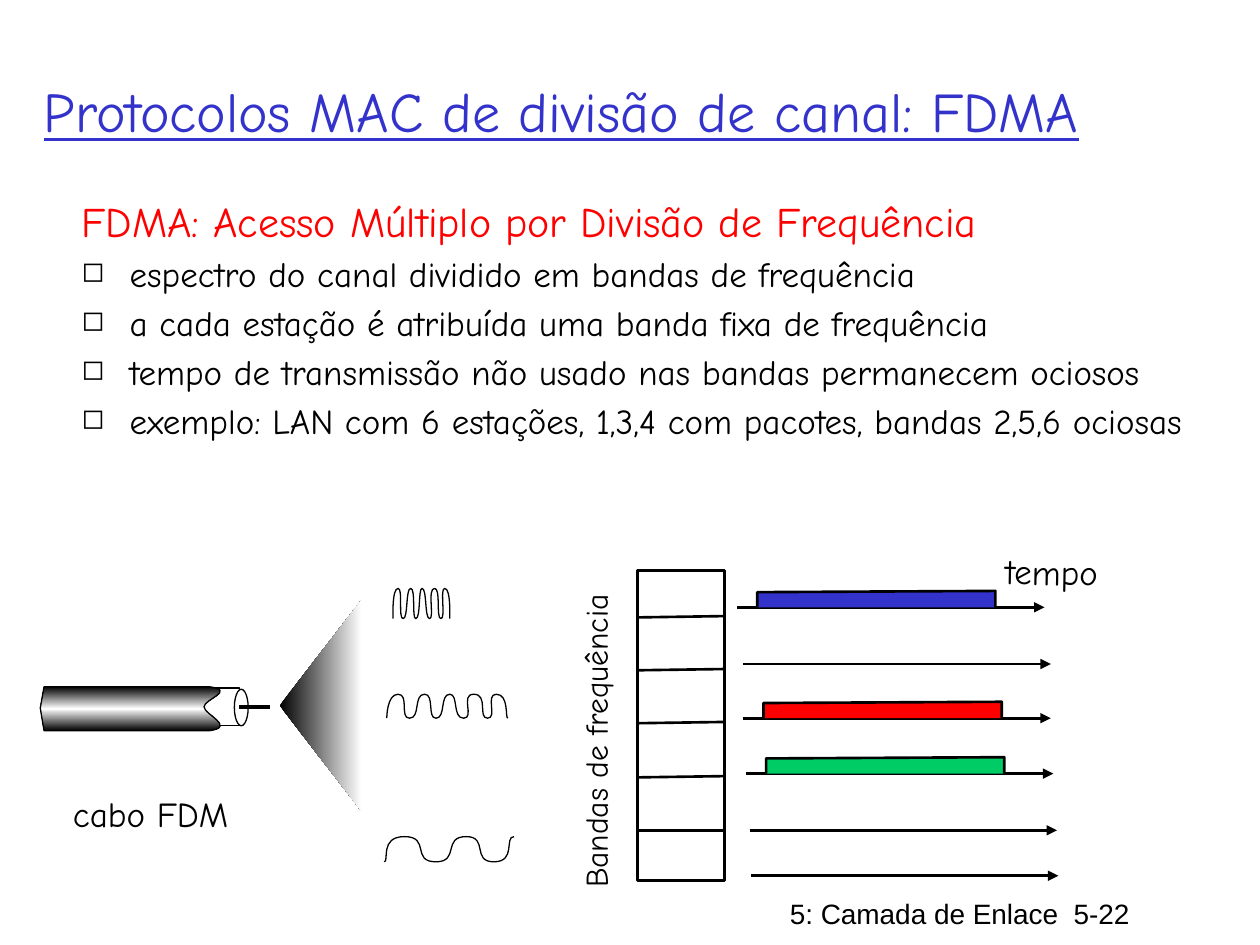
from dataclasses import dataclass
from typing import Optional

from lxml.etree import Element, SubElement
from pptx import Presentation
from pptx.dml.color import RGBColor
from pptx.enum.shapes import MSO_CONNECTOR, MSO_SHAPE
from pptx.enum.text import MSO_ANCHOR
from pptx.oxml.ns import qn
from pptx.util import Inches, Pt

BLACK = RGBColor(0, 0, 0)
WHITE = RGBColor(255, 255, 255)
BLUE = RGBColor(0x33, 0x33, 0xCC)
RED = RGBColor(255, 0, 0)
GREEN = RGBColor(0, 0xCC, 0x66)
COMIC = "Comic Neue"

Point = tuple[float, float]


@dataclass
class Label:
    text: str
    box: tuple[float, float, float, float]
    size: int
    font: str = COMIC
    color: RGBColor = BLACK
    turn: float = 0
    wrap: bool = False
    line: bool = False
    mid: bool = False


@dataclass
class Band:
    left: float
    base: float
    fill: Optional[RGBColor] = None


@dataclass
class Wave:
    top: float
    low: float
    xs: tuple[float, ...]  # start, then two controls and an end per half wave


deck = Presentation()
deck.slide_width, deck.slide_height = Inches(10), Inches(7.5)
slide = deck.slides.add_slide(deck.slide_layouts[6])
shapes = slide.shapes


def add_run(para, text: str, size: int, font: str, color: RGBColor):
    run = para.add_run()
    run.text = text
    run.font.size, run.font.name = Pt(size), font
    run.font.color.rgb = color
    return run


def add_label(label: Label) -> None:
    box = shapes.add_textbox(*map(Inches, label.box))
    box.rotation = label.turn
    frame = box.text_frame
    frame.word_wrap = label.wrap
    if label.mid:
        frame.vertical_anchor = MSO_ANCHOR.MIDDLE
    run = add_run(frame.paragraphs[0], label.text, label.size, label.font, label.color)
    if label.line:
        run.font.underline = True


def style(shape, fill: Optional[RGBColor], width: float) -> None:
    shape.shadow.inherit = False
    if fill is None:
        shape.fill.background()
    else:
        shape.fill.solid()
        shape.fill.fore_color.rgb = fill
    if width:
        shape.line.color.rgb = BLACK
        shape.line.width = Pt(width)
    else:
        shape.line.fill.background()


def add_form(kind, box, width: float) -> None:
    style(shapes.add_shape(kind, *map(Inches, box)), WHITE, width)


def add_path(points: list[Point], fill: Optional[RGBColor], width: float, close: bool):
    spots = [(Inches(x), Inches(y)) for x, y in points]
    pen = shapes.build_freeform(*spots[0], scale=1.0)
    pen.add_line_segments(spots[1:], close=close)
    shape = pen.convert_to_shape()
    style(shape, fill, width)
    return shape


def bend(shape, first: int = 0) -> None:
    """Turn each three segments, counted from first, into one cubic curve."""
    trace = shape._element.spPr.find(".//" + qn("a:path"))
    for i, line in enumerate(trace.findall(qn("a:lnTo"))[first:]):
        if i % 3 == 0:
            cubic = Element(qn("a:cubicBezTo"))
            line.addprevious(cubic)
        cubic.append(line[0])
        trace.remove(line)


def add_line(start: Point, end: Point, width: float, arrow: bool = False) -> None:
    line = shapes.add_connector(MSO_CONNECTOR.STRAIGHT, *map(Inches, start + end))
    line.line.color.rgb = BLACK
    line.line.width = Pt(width)
    if arrow:
        SubElement(line.line._get_or_add_ln(), qn("a:tailEnd"), type="triangle")
    SubElement(line._element.spPr, qn("a:effectLst"))


def shade(shape, angle: int, stops: list[tuple[int, RGBColor]]) -> None:
    shape.fill.gradient()
    shape.fill.gradient_angle = angle
    ramp = shape._element.spPr.find(".//" + qn("a:gsLst"))
    for stop in list(ramp):
        ramp.remove(stop)
    for place, color in stops:
        stop = SubElement(ramp, qn("a:gs"), pos=str(place * 1000))
        SubElement(stop, qn("a:srgbClr"), val=str(color))


def add_band(band: Band) -> None:
    x, y = band.left, band.base
    add_line((x, y), (x + 2.44, y), 1.5, arrow=True)
    if band.fill is not None:
        near, far = x + 0.16, x + 2.05
        edge = [(near, y), (near, y - 0.12), (far, y - 0.13), (far, y)]
        add_path(edge, band.fill, 1.5, close=False)


def add_wave(wave: Wave) -> None:
    last = wave.low
    points = [(wave.xs[0], last)]
    for half, i in enumerate(range(1, len(wave.xs), 3)):
        y = wave.low if half % 2 else wave.top
        points += zip(wave.xs[i:i + 3], (last, y, y))
        last = y
    bend(add_path(points, None, 0.75, close=False))


# Title, footer and captions
for label in (
    Label("5: Camada de Enlace  5-22", (6.17, 7.07, 3.83, 0.37), 16, "Arial", wrap=True),
    Label("Protocolos MAC de divisão de canal: FDMA", (0.25, 0.25, 9.44, 1.25), 32,
          color=BLUE, wrap=True, line=True, mid=True),
    Label("Bandas de frequência", (3.37, 5.59, 2.71, 0.4), 18, turn=270),
    Label("tempo", (7.88, 4.32, 1, 0.44), 20, turn=1.1),
    Label("cabo FDM", (0.48, 6.24, 1.51, 0.44), 20),
):
    add_label(label)

# Body list
frame = shapes.add_textbox(*map(Inches, (0.55, 1.5, 8.99, 2.17))).text_frame
frame.word_wrap = True
add_run(frame.paragraphs[0], "FDMA: Acesso Múltiplo por Divisão de Frequência", 24, COMIC, RED)
for text in (
    "espectro do canal dividido em bandas de frequência",
    "a cada estação é atribuída uma banda fixa de frequência",
    "tempo de transmissão não usado nas bandas permanecem ociosos",
    "exemplo: LAN com 6 estações, 1,3,4 com pacotes, bandas 2,5,6 ociosas",
):
    para = frame.add_paragraph()
    props = para._p.get_or_add_pPr()
    props.set("marL", str(Inches(0.38)))
    props.set("indent", str(Inches(-0.38)))
    SubElement(SubElement(props, qn("a:spcBef")), qn("a:spcPct"), val="20000")
    SubElement(props, qn("a:buSzPct"), val="80000")
    SubElement(props, qn("a:buChar"), char="◻")
    add_run(para, text, 20, COMIC, BLACK)

# Frequency column and time axes
add_form(MSO_SHAPE.RECTANGLE, (5.06, 4.53, 0.69, 2.46), 1.5)
for y in (4.9, 5.32, 5.74, 6.17):
    add_line((5.06, y), (5.74, y - 0.01), 1.5)
add_line((5.06, 6.59), (5.74, 6.59), 1.5)
for band in (
    Band(5.85, 4.82, BLUE), Band(5.9, 5.27), Band(5.9, 5.7, RED),
    Band(5.92, 6.14, GREEN), Band(5.95, 6.59), Band(5.96, 6.95),
):
    add_band(band)

# Light cone
cone = add_path([(2.87, 4.76), (2.22, 5.6), (2.87, 6.44)], WHITE, 0, close=True)
shade(cone, 0, [(0, BLACK), (100, WHITE)])

# Cable
add_form(MSO_SHAPE.RECTANGLE, (1.61, 5.46, 0.29, 0.3), 0.75)
coat = add_path([(0.35, 5.45), (0.32, 5.62), (0.35, 5.8), (1.66, 5.8),
                 (1.88, 5.77), (1.62, 5.67), (1.62, 5.61),
                 (1.62, 5.55), (1.88, 5.48), (1.66, 5.45)], WHITE, 0.75, close=True)
bend(coat, first=3)
shade(coat, 90, [(0, BLACK), (50, WHITE), (100, BLACK)])
add_form(MSO_SHAPE.OVAL, (1.86, 5.47, 0.11, 0.29), 0.75)
add_line((1.9, 5.61), (2.14, 5.61), 2.25)

# Waves
for wave in (
    Wave(5.51, 5.7, (3.07, 3.07, 3.07, 3.16, 3.25, 3.17, 3.25, 3.34, 3.28, 3.37,
                     3.45, 3.39, 3.46, 3.54, 3.49, 3.57, 3.64, 3.59, 3.68, 3.77, 3.65, 3.76,
                     3.88, 3.79, 3.87, 3.95, 3.85, 3.94, 4.04, 4.01, 4.03)),
    Wave(4.67, 4.91, (3.12, 3.12, 3.11, 3.16, 3.2, 3.16, 3.2, 3.24, 3.22, 3.26,
                      3.3, 3.27, 3.3, 3.34, 3.32, 3.35, 3.39, 3.37, 3.41, 3.45, 3.39, 3.45,
                      3.5, 3.46, 3.5, 3.54, 3.49, 3.53, 3.58, 3.57, 3.57)),
    Wave(6.64, 6.84, (3.05, 3.09, 3.01, 3.21, 3.42, 3.26, 3.46, 3.65, 3.51, 3.7,
                      3.88, 3.74, 3.92, 4.1, 4, 4.08)),
):
    add_wave(wave)

deck.save("out.pptx")
